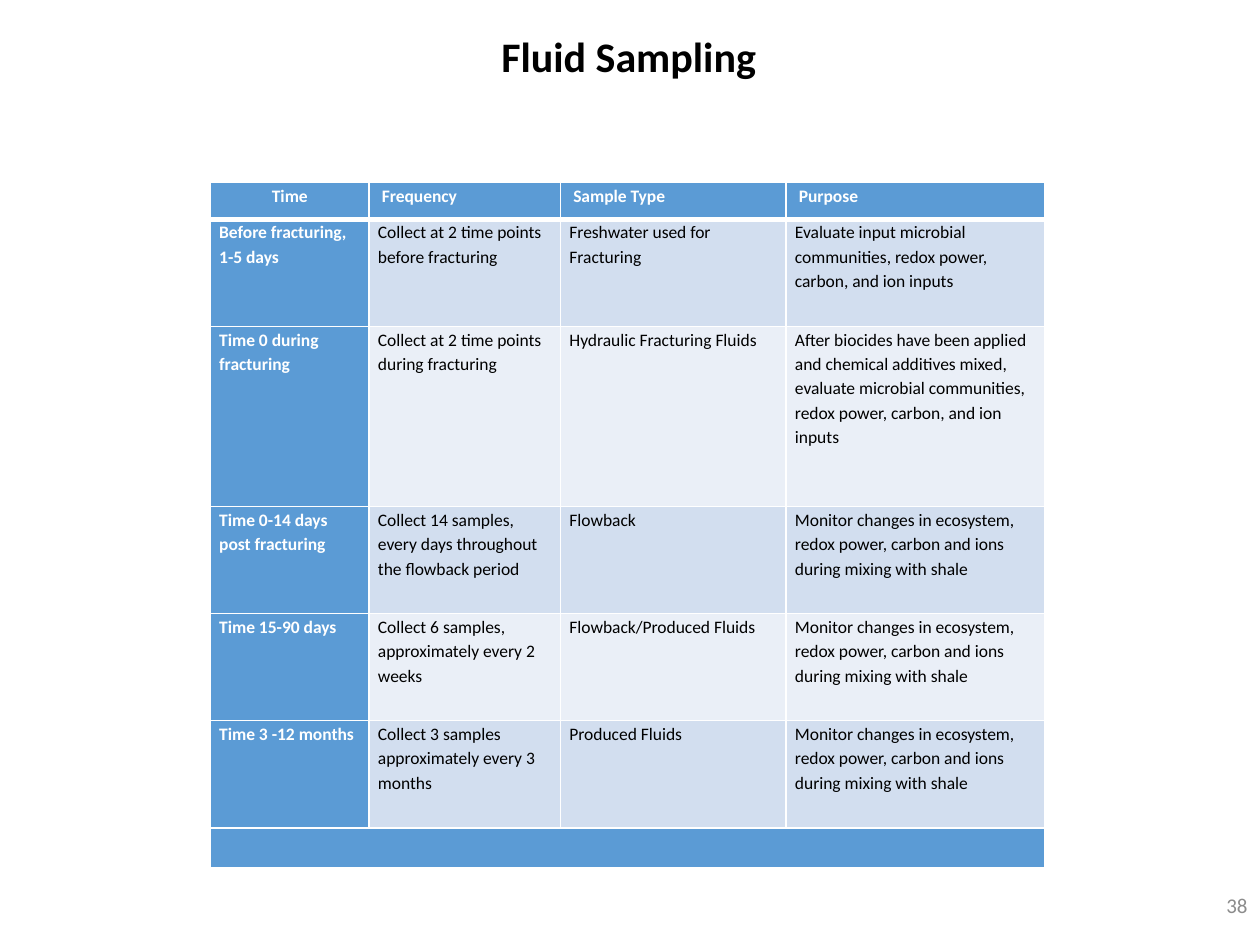
"""Build the Fluid Sampling slide with its sampling schedule table."""
from lxml import etree
from pptx import Presentation
from pptx import util as u
from pptx.dml.color import RGBColor
from pptx.enum import text
from pptx.oxml.ns import qn

FONT = "Calibri"
COLORS = {
    "ink": "000000",
    "white": "FFFFFF",
    "page": "8C8C8C",
    "accent": "5B9BD5",
    "odd": "D2DEEF",
    "even": "EAEFF7",
}
COLUMN_WIDTHS = [1.26, 1.52, 1.79, 2.05]
ROW_HEIGHTS = [0.29, 0.85, 1.43, 0.85, 0.85, 0.85, 0.32]
MIXING = ("Monitor changes in ecosystem, redox power, carbon and ions "
          "during mixing with shale")
SCHEDULE = [
    ["Time", "Frequency", "Sample Type", "Purpose"],
    ["Before fracturing, 1-5 days", "Collect at 2 time points before fracturing",
     "Freshwater used for Fracturing",
     "Evaluate input microbial communities, redox power, carbon, and ion inputs"],
    ["Time 0 during fracturing", "Collect at 2 time points during fracturing",
     "Hydraulic Fracturing Fluids",
     "After biocides have been applied and chemical additives mixed, evaluate "
     "microbial communities, redox power, carbon, and ion inputs"],
    ["Time 0-14 days post fracturing",
     "Collect 14 samples, every days throughout the flowback period",
     "Flowback", MIXING],
    ["Time 15-90 days", "Collect 6 samples, approximately every 2 weeks",
     "Flowback/Produced Fluids", MIXING],
    ["Time 3 -12 months", "Collect 3 samples approximately every 3 months",
     "Produced Fluids", MIXING],
]


def rgb(name):
    return RGBColor.from_string(COLORS[name])


def style_paragraph(paragraph, size, color, bold=False, align=None, spacing=None):
    paragraph.alignment = align
    paragraph.line_spacing = spacing
    for run in paragraph.runs:
        run.font.name = FONT
        run.font.size = u.Pt(size)
        run.font.bold = bold
        run.font.color.rgb = rgb(color)


def add_label(slide, wording, left, top, width, height, **style):
    label = slide.shapes.add_textbox(
        u.Inches(left), u.Inches(top), u.Inches(width), u.Inches(height))
    frame = label.text_frame
    frame.word_wrap = True
    frame.vertical_anchor = text.MSO_ANCHOR.MIDDLE
    frame.text = wording
    style_paragraph(frame.paragraphs[0], **style)


def add_borders(cell, top=1, bottom=1):
    properties = cell._tc.get_or_add_tcPr()
    for side, points in (("L", 1), ("R", 1), ("T", top), ("B", bottom)):
        line = etree.SubElement(properties, qn(f"a:ln{side}"), w=str(u.Pt(points)))
        fill = etree.SubElement(line, qn("a:solidFill"))
        etree.SubElement(fill, qn("a:srgbClr"), val=COLORS["white"])


def paint_cell(cell, fill, top=1, bottom=1):
    add_borders(cell, top, bottom)
    cell.fill.solid()
    cell.fill.fore_color.rgb = rgb(fill)
    cell.margin_left = cell.margin_right = u.Inches(0.07)
    cell.margin_top = cell.margin_bottom = 0


def fill_cell(cell, wording, row, column):
    header = row == 0
    accented = header or column == 0
    band = "odd" if row % 2 else "even"
    paint_cell(cell, "accent" if accented else band,
               top=3 if row == 1 else 1, bottom=3 if header else 1)
    if header and column:
        cell.margin_left = u.Inches(0.1)
    cell.text_frame.text = wording
    paragraph = cell.text_frame.paragraphs[0]
    centered = header and column == 0
    style_paragraph(paragraph, 10, "white" if accented else "ink", accented,
                    text.PP_ALIGN.CENTER if centered else text.PP_ALIGN.LEFT, 1.15)
    paragraph.space_after = u.Pt(10)


def add_schedule(slide):
    schedule = slide.shapes.add_table(
        len(ROW_HEIGHTS), len(COLUMN_WIDTHS), u.Inches(1.67), u.Inches(1.45),
        u.Inches(sum(COLUMN_WIDTHS)), u.Inches(sum(ROW_HEIGHTS))).table
    for column, width in zip(schedule.columns, COLUMN_WIDTHS):
        column.width = u.Inches(width)
    for row, height in zip(schedule.rows, ROW_HEIGHTS):
        row.height = u.Inches(height)
    for row, entries in enumerate(SCHEDULE):
        for column, wording in enumerate(entries):
            fill_cell(schedule.cell(row, column), wording, row, column)
    last = len(ROW_HEIGHTS) - 1
    footer = schedule.cell(last, 0)
    footer.merge(schedule.cell(last, len(COLUMN_WIDTHS) - 1))
    paint_cell(footer, "accent")


def main():
    deck = Presentation()
    deck.slide_width, deck.slide_height = u.Inches(10), u.Inches(7.5)
    slide = deck.slides.add_slide(deck.slide_layouts[6])
    add_label(slide, "Fluid Sampling", 0.68, 0.08, 8.62, 0.77, size=24,
              color="ink", bold=True, align=text.PP_ALIGN.CENTER, spacing=0.9)
    add_label(slide, "38", 7.75, 6.98, 2.25, 0.4, size=12, color="page",
              align=text.PP_ALIGN.RIGHT)
    add_schedule(slide)
    deck.save("out.pptx")


if __name__ == "__main__":
    main()
